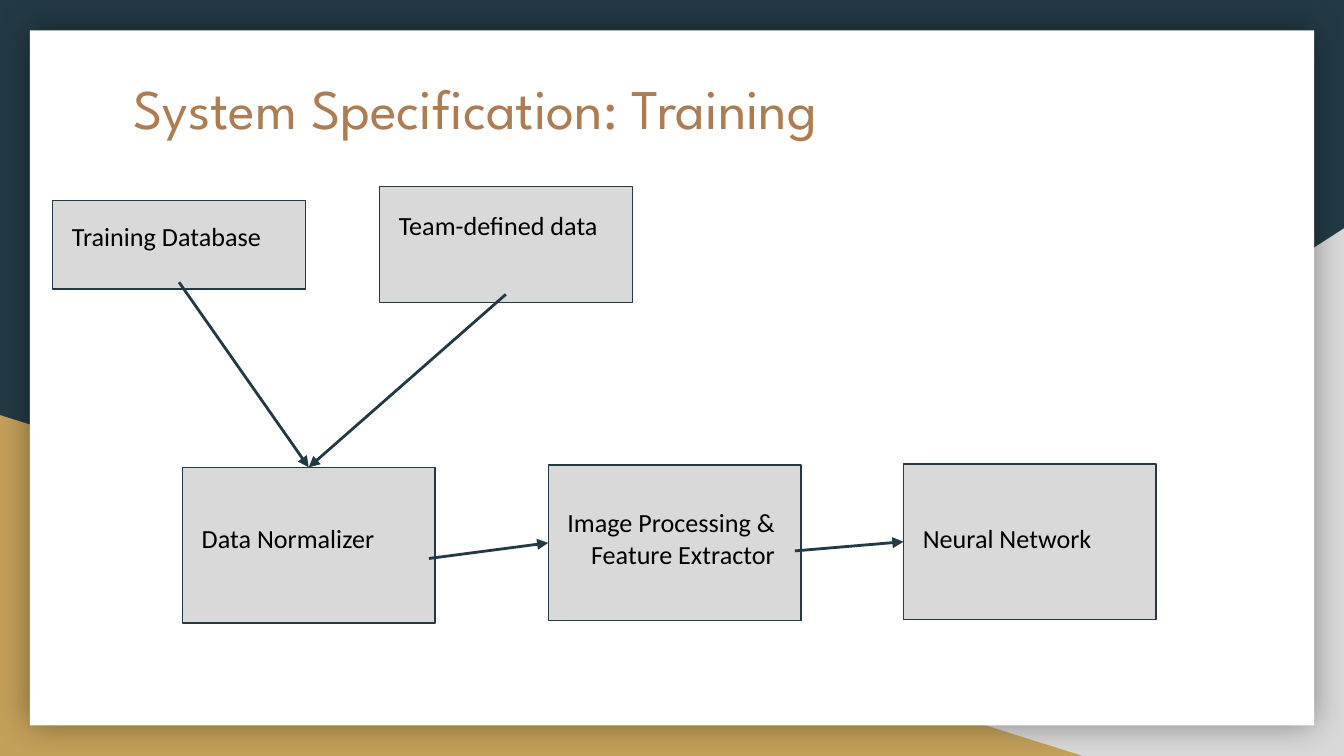
from dataclasses import dataclass

from lxml.etree import SubElement
from pptx import Presentation
from pptx.dml.color import RGBColor
from pptx.enum.shapes import MSO_CONNECTOR, MSO_SHAPE
from pptx.enum.text import MSO_ANCHOR, PP_ALIGN
from pptx.oxml.ns import qn
from pptx.util import Pt

COLOURS = {
    "navy": "233A44",
    "grey": "D9D9D9",
    "gold": "C4A15A",
    "white": "FFFFFF",
    "copper": "AF7B51",
    "black": "000000",
}
TITLE_FORMAT = {"name": "League Spartan", "size": Pt(30)}
LABEL_FORMAT = {"name": "Calibri", "size": Pt(14)}
FRAME_FORMAT = {
    "word_wrap": True,
    "vertical_anchor": MSO_ANCHOR.TOP,
    "margin_left": Pt(7.2),
    "margin_right": Pt(7.2),
    "margin_top": Pt(7.2),
    "margin_bottom": Pt(7.2),
}
RIGHT_FRAME_FORMAT = FRAME_FORMAT | {"margin_left": Pt(0), "margin_right": Pt(10.6)}
NODE_WIDTH = 135.4
LABEL_INSET = 3.3
TOP, LEFT, BOTTOM, RIGHT = 0, 1, 2, 3


@dataclass(frozen=True)
class Area:
    left: float
    top: float
    width: float
    height: float

    def lengths(self) -> list:
        return [Pt(value) for value in (self.left, self.top, self.width, self.height)]


@dataclass(frozen=True)
class Node:
    text: str
    left: float
    top: float
    height: float
    label_top: float
    label_height: float
    align: PP_ALIGN = PP_ALIGN.LEFT


@dataclass(frozen=True)
class Link:
    source: str
    source_side: int
    target: str
    target_side: int


NODES = {
    "network": Node("Neural Network", 484, 248.6, 83.3, 272.9, 52.6),
    "normalizer": Node("Data Normalizer", 97.7, 250.4, 83.3, 272.9, 52.6),
    "extractor": Node("Image Processing &\vFeature Extractor", 293.7, 249.2, 83.3,
                      264.2, 61.9, PP_ALIGN.RIGHT),
    "database": Node("Training Database", 28.2, 107.4, 47.5, 110.9, 40.3),
    "team": Node("Team-defined data", 203.3, 100.1, 61.9, 105.1, 52.6),
}
LINKS = [
    Link("database", BOTTOM, "normalizer", TOP),
    Link("team", BOTTOM, "normalizer", TOP),
    Link("normalizer", RIGHT, "extractor", LEFT),
    Link("extractor", RIGHT, "network", LEFT),
]


def colour(name: str) -> RGBColor:
    return RGBColor.from_string(COLOURS[name])


def apply_format(target, values: dict) -> None:
    for name, value in values.items():
        setattr(target, name, value)


def add_block(page, kind: MSO_SHAPE, area: Area, fill: str, outline: str = ""):
    block = page.shapes.add_shape(kind, *area.lengths())
    block.shadow.inherit = False
    block.fill.solid()
    block.fill.fore_color.rgb = colour(fill)
    if outline:
        block.line.color.rgb = colour(outline)
        block.line.width = Pt(0.75)
    else:
        block.line.fill.background()
    return block


def add_glow(block) -> None:
    effects = block._element.spPr.find(qn("a:effectLst"))
    shadow = SubElement(effects, qn("a:outerShdw"), blurRad=str(Pt(18)), dist="0",
                        dir="0", algn="ctr", rotWithShape="0")
    tint = SubElement(shadow, qn("a:srgbClr"), val=COLOURS["black"])
    SubElement(tint, qn("a:alpha"), val="40000")


def add_text(page, area: Area, text: str, font: dict, tint: str,
             align: PP_ALIGN = PP_ALIGN.LEFT):
    box = page.shapes.add_textbox(*area.lengths())
    frame = RIGHT_FRAME_FORMAT if align == PP_ALIGN.RIGHT else FRAME_FORMAT
    apply_format(box.text_frame, frame)
    para = box.text_frame.paragraphs[0]
    para.text = text
    para.alignment = align
    for span in para.runs:
        apply_format(span.font, font)
        span.font.color.rgb = colour(tint)
    return box


def add_node(page, node: Node) -> tuple:
    area = Area(node.left, node.top, NODE_WIDTH, node.height)
    block = add_block(page, MSO_SHAPE.RECTANGLE, area, "grey", "navy")
    label_area = Area(node.left + LABEL_INSET, node.label_top,
                      NODE_WIDTH - 2 * LABEL_INSET, node.label_height)
    label = add_text(page, label_area, node.text, LABEL_FORMAT, "black", node.align)
    return block, label


def add_link(page, link: Link, blocks: dict, labels: dict) -> None:
    arrow = page.shapes.add_connector(MSO_CONNECTOR.STRAIGHT, Pt(0), Pt(0), Pt(0), Pt(0))
    arrow.begin_connect(labels[link.source], link.source_side)
    arrow.end_connect(blocks[link.target], link.target_side)
    arrow.line.color.rgb = colour("navy")
    arrow.line.width = Pt(1.5)
    SubElement(arrow.line._get_or_add_ln(), qn("a:tailEnd"), type="triangle")
    SubElement(arrow._element.spPr, qn("a:effectLst"))


def add_backdrop(page) -> None:
    page.background.fill.solid()
    page.background.fill.fore_color.rgb = colour("navy")
    corner = add_block(page, MSO_SHAPE.RIGHT_TRIANGLE, Area(282, 122.4, 438, 282.6), "grey")
    corner._element.spPr.xfrm.set("flipH", "1")
    add_block(page, MSO_SHAPE.RIGHT_TRIANGLE, Area(0, 222.4, 580, 182.6), "gold")
    panel = add_block(page, MSO_SHAPE.RECTANGLE, Area(16, 16.3, 688, 372.4), "white")
    add_glow(panel)


def main() -> None:
    deck = Presentation()
    deck.slide_width, deck.slide_height = Pt(720), Pt(405)
    page = deck.slides.add_slide(deck.slide_layouts[6])
    add_backdrop(page)
    add_text(page, Area(64.5, 32.4, 591, 75), "System Specification: Training",
             TITLE_FORMAT, "copper")
    blocks, labels = {}, {}
    for name, node in NODES.items():
        blocks[name], labels[name] = add_node(page, node)
    for link in LINKS:
        add_link(page, link, blocks, labels)
    deck.save("out.pptx")


if __name__ == "__main__":
    main()
